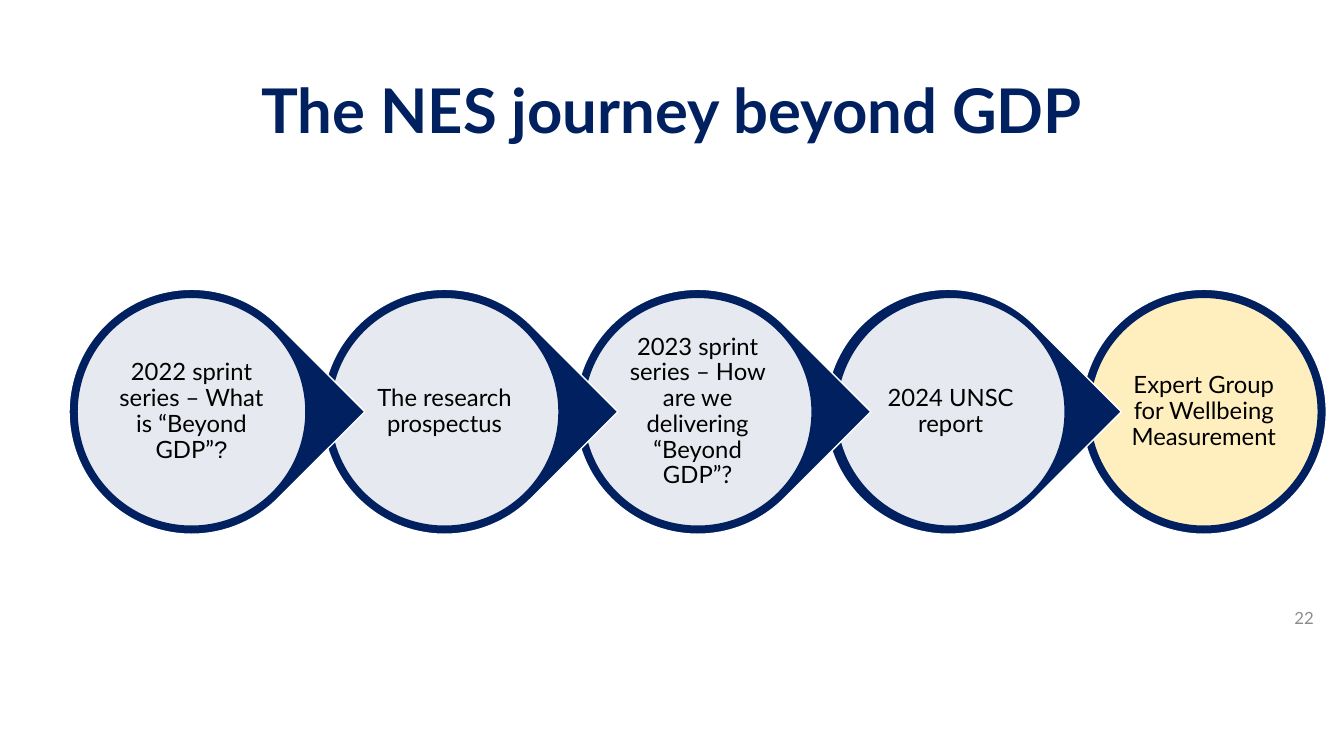
from dataclasses import dataclass
from lxml.etree import SubElement
from pptx import Presentation
from pptx.dml.color import RGBColor
from pptx.enum.shapes import MSO_SHAPE as Preset
from pptx.enum.text import MSO_ANCHOR as Anchor, PP_ALIGN as Align
from pptx.oxml.ns import qn
from pptx.util import Inches, Pt


@dataclass(frozen=True)
class Theme:
    navy: str = "002060"
    white: str = "FFFFFF"
    cream: str = "FFEFBF"
    black: str = "000000"
    grey: str = "8C8C8C"
    font: str = "Lato"
    mark_font: str = "Arial"
    title_size: int = 44
    stage_size: int = 17
    number_size: int = 12


THEME = Theme()
WIDTH, HEIGHT = Inches(13.33), Inches(7.5)
FIRST_CENTRE, STAGE_PITCH, STAGE_ROW = 14.25, 18.83, 54.47
RIM, DISC, LABEL = 18.23, 17.03, 12.15
STAGES = [
    ([("2022 sprint series – What is “Beyond GDP”", THEME.font), ("?", THEME.mark_font)], 0),
    ([("The research prospectus", THEME.font)], 0),
    ([("2023 sprint series – How are we delivering “Beyond GDP”?", THEME.font)], 0),
    ([("2024 UNSC report", THEME.font)], -0.2),
    ([("Expert Group for Wellbeing Measurement", THEME.font)], 0),
]


def apply(target, formats):
    for name, value in formats.items():
        setattr(target, name, value)


def centred(column, row, width, height):
    return (
        int(WIDTH * column / 100 - width / 2),
        int(HEIGHT * row / 100 - height / 2),
        int(width),
        int(height),
    )


def share(percent, length=WIDTH):
    return length * percent / 100


def add_text(slide, box, pieces, size, colour, align=Align.CENTER,
             bold=False, spacing=None, inset=None):
    frame = slide.shapes.add_textbox(*box).text_frame
    apply(frame, {"word_wrap": True, "vertical_anchor": Anchor.MIDDLE})
    if inset is not None:
        sides = ("left", "top", "right", "bottom")
        apply(frame, {f"margin_{side}": inset for side in sides})
    paragraph = frame.paragraphs[0]
    apply(paragraph, {"alignment": align, "line_spacing": spacing})
    for words, font in pieces:
        run = paragraph.add_run()
        run.text = words
        apply(run.font, {"name": font, "size": Pt(size), "bold": bold})
        run.font.color.rgb = RGBColor.from_string(colour)


def add_round(slide, preset, column, diameter, fill, line, opacity=100):
    side = share(diameter)
    round_shape = slide.shapes.add_shape(preset, *centred(column, STAGE_ROW, side, side))
    round_shape.shadow.inherit = False
    round_shape.fill.solid()
    round_shape.fill.fore_color.rgb = RGBColor.from_string(fill)
    round_shape.line.color.rgb = RGBColor.from_string(line)
    round_shape.line.width = Pt(1)
    if opacity < 100:
        colour = round_shape.fill._xPr.find(qn("a:solidFill"))[0]
        SubElement(colour, qn("a:alpha"), val=str(opacity * 1000))
    return round_shape


def add_stage(slide, index, pieces, rim_shift):
    column = FIRST_CENTRE + STAGE_PITCH * index
    is_last = index == len(STAGES) - 1
    rim_preset = Preset.OVAL if is_last else Preset.TEAR
    rim = add_round(slide, rim_preset, column + rim_shift, RIM, THEME.navy, THEME.white)
    if not is_last:
        rim.adjustments[0] = 1
        rim.rotation = 45
    disc_fill, opacity = (THEME.cream, 100) if is_last else (THEME.white, 90)
    add_round(slide, Preset.OVAL, column, DISC, disc_fill, THEME.navy, opacity)
    side = share(LABEL)
    add_text(slide, centred(column, STAGE_ROW, side, side), pieces,
             THEME.stage_size, THEME.black, spacing=0.9, inset=Inches(0.02))


def main():
    deck = Presentation()
    apply(deck, {"slide_width": WIDTH, "slide_height": HEIGHT})
    slide = deck.slides.add_slide(deck.slide_layouts[6])
    title_box = centred(50, 15, share(86.27), share(19.33, HEIGHT))
    add_text(slide, title_box, [("The NES journey beyond GDP", THEME.font)],
             THEME.title_size, THEME.navy, bold=True, spacing=0.9)
    number_box = centred(87.25, 81.73, share(22.5), share(5.33, HEIGHT))
    add_text(slide, number_box, [("22", THEME.font)],
             THEME.number_size, THEME.grey, align=Align.RIGHT)
    for index, (pieces, rim_shift) in reversed(list(enumerate(STAGES))):
        add_stage(slide, index, pieces, rim_shift)
    deck.save("out.pptx")


if __name__ == "__main__":
    main()
